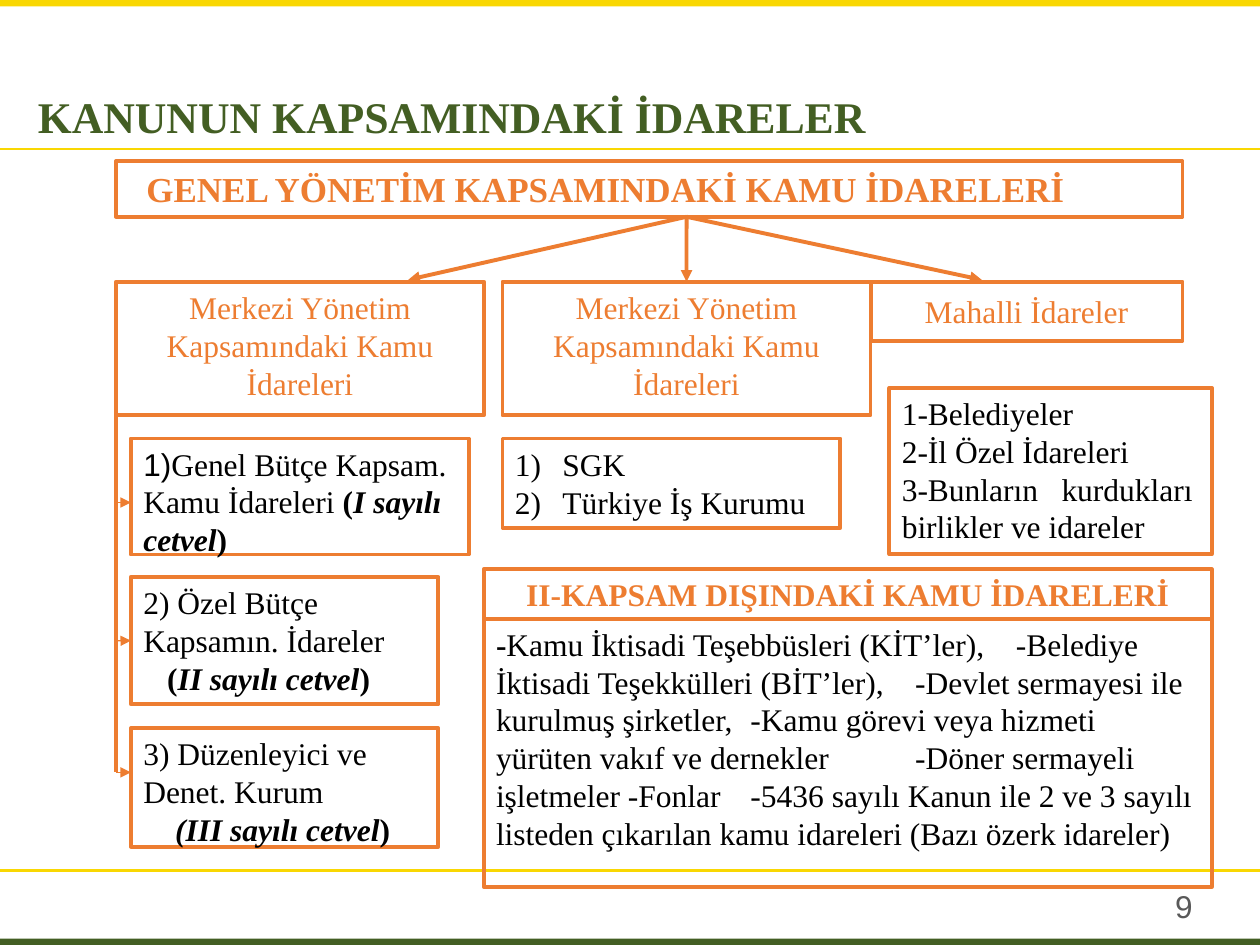
from dataclasses import dataclass

from lxml import etree
from pptx import Presentation
from pptx.dml.color import RGBColor
from pptx.enum.shapes import MSO_CONNECTOR, MSO_SHAPE
from pptx.enum.text import MSO_ANCHOR, PP_ALIGN
from pptx.oxml.ns import qn
from pptx.util import Cm, Pt

RECT = MSO_SHAPE.RECTANGLE
STRAIGHT = MSO_CONNECTOR.STRAIGHT
LEFT, CENTER = PP_ALIGN.LEFT, PP_ALIGN.CENTER
TOP, MIDDLE, BOTTOM = MSO_ANCHOR.TOP, MSO_ANCHOR.MIDDLE, MSO_ANCHOR.BOTTOM


@dataclass(frozen=True)
class Theme:
    yellow: str = "F9D702"
    green: str = "435E23"
    orange: str = "ED7D31"
    black: str = "000000"
    grey: str = "595959"
    serif: str = "Times New Roman"
    sans: str = "Arial"
    title: int = 25
    heading: int = 20
    body: int = 18
    thick: float = 2.25
    rule: float = 1.5
    thin: float = 0.75


T = Theme()


def rgb(value):
    return RGBColor.from_string(value)


def write(tf, paragraphs, color=T.black, size=T.body, bold=False, align=LEFT,
          anchor=TOP, font=T.serif, indents=(), tabs=(), numbered=False):
    """Each paragraph is a string or a list of (text, format) runs;
    the format letters are b bold, i italic, s sans serif."""
    tf.word_wrap = True
    tf.vertical_anchor = anchor
    for i, runs in enumerate(paragraphs):
        p = tf.paragraphs[0] if i == 0 else tf.add_paragraph()
        p.alignment = align
        pPr = p._p.get_or_add_pPr()
        if i < len(indents):
            pPr.set("marL", str(Cm(indents[i])))
        if numbered:
            pPr.set("marL", str(Cm(0.96)))
            pPr.set("indent", str(-Cm(0.96)))
            etree.SubElement(pPr, qn("a:buAutoNum"), type="arabicParenR")
        if tabs:
            tab_list = etree.SubElement(pPr, qn("a:tabLst"))
            for pos in tabs:
                etree.SubElement(tab_list, qn("a:tab"), pos=str(Cm(pos)), algn="l")
        for text, style in [(runs, "")] if isinstance(runs, str) else runs:
            r = p.add_run()
            r.text = text
            r.font.name = T.sans if "s" in style else font
            r.font.size = Pt(size)
            r.font.bold = bold or "b" in style
            r.font.italic = "i" in style
            r.font.color.rgb = rgb(color)


def block(s, x, y, w, h, paragraphs=(), fill=None, **fmt):
    """Outlined text box, or a plain band when a fill is given."""
    sp = s.shapes.add_shape(RECT, Cm(x), Cm(y), Cm(w), Cm(h))
    sp.shadow.inherit = False
    if fill:
        sp.fill.solid()
        sp.fill.fore_color.rgb = rgb(fill)
        sp.line.fill.background()
    else:
        sp.fill.background()
        sp.line.color.rgb = rgb(T.orange)
        sp.line.width = Pt(T.thick)
    if paragraphs:
        write(sp.text_frame, paragraphs, **fmt)
    return sp


def line(s, x1, y1, x2, y2, color=T.orange, width=T.thick, arrow=False):
    c = s.shapes.add_connector(STRAIGHT, Cm(x1), Cm(y1), Cm(x2), Cm(y2))
    c.line.color.rgb = rgb(color)
    c.line.width = Pt(width)
    if arrow:
        etree.SubElement(c.line._get_or_add_ln(), qn("a:tailEnd"), type="triangle")
    etree.SubElement(c._element.spPr, qn("a:effectLst"))
    return c


# Bands, rules and page number
def page_frame(s, x, y, w, h):
    band = 0.13
    block(s, x, y, w, band, fill=T.yellow)
    block(s, x, y + h - band, w, band, fill=T.green)
    for rule_y in (3.0, 17.55):
        line(s, x, y + rule_y, x + w, y + rule_y, T.yellow, T.rule)
    tb = s.shapes.add_textbox(Cm(x + w - 1.96), Cm(y + 17.75), Cm(1.96), Cm(1.02))
    write(tb.text_frame, ["9"], color=T.grey, font=T.sans)


def slide_title(s, x, y, w, h):
    sp = s.shapes.title
    sp.left, sp.top, sp.width, sp.height = Cm(x), Cm(y), Cm(w), Cm(h)
    write(sp.text_frame, ["KANUNUN KAPSAMINDAKİ İDARELER"], color=T.green,
          size=T.title, bold=True, anchor=BOTTOM)


# Heading bar, its three branches and the arrows between them
def overview(s, x, y, w, h):
    bar_h, row_y, branch_w, branch_h = 1.12, 2.43, 7.42, 2.69
    block(s, x, y, w, bar_h, ["GENEL YÖNETİM KAPSAMINDAKİ KAMU İDARELERİ"],
          color=T.orange, size=T.heading, bold=True, indents=(0.36,))
    fmt = {"color": T.orange, "align": CENTER}
    name = ["Merkezi Yönetim Kapsamındaki Kamu İdareleri"]
    block(s, x, y + row_y, branch_w, branch_h, name, **fmt)
    middle = block(s, x + 7.79, y + row_y, branch_w, branch_h, name, **fmt)
    local_x = 7.79 + branch_w
    block(s, x + local_x, y + row_y, w - local_x, 1.19, ["Mahalli İdareler"],
          anchor=MIDDLE, **fmt)
    hub = x + 11.5
    for end_x in (x + 5.89, x + 17.45):
        line(s, hub, y + bar_h, end_x, y + row_y - 0.04, arrow=True)
    line(s, hub, y + bar_h, hub, y + row_y, arrow=True).end_connect(middle, 0)


# Budget lists hanging from a vertical trunk
def central_budgets(s, x, y, w, h):
    gap = 0.3
    general = [[("1)", "s"), ("Genel Bütçe Kapsam. Kamu İdareleri ", ""),
                ("(", "b"), ("I sayılı cetvel", "bi"), (")", "b")]]
    special = ["2) Özel Bütçe Kapsamın. İdareler",
               [("(", "b"), ("II sayılı cetvel", "bi"), (")", "b")]]
    regulatory = ["3) Düzenleyici ve Denet. Kurum",
                  [("(III sayılı cetvel", "bi"), (")", "b")]]
    narrow = w - gap - 0.61
    block(s, x + gap, y + 0.48, w - gap, 2.34, general)
    second = block(s, x + gap, y + 3.27, narrow, 2.57, special, indents=(0, 0.48))
    block(s, x + gap, y + 6.32, narrow, h - 6.32, regulatory, indents=(0, 0.64))
    line(s, x, y, x, y + 7.21)
    arrows = [line(s, x, y + dy, x + gap, y + dy, width=T.thin, arrow=True)
              for dy in (1.77, 4.56, 7.21)]
    arrows[1].end_connect(second, 1)


def social_security(s, x, y, w, h):
    block(s, x, y, w, h, ["SGK", "Türkiye İş Kurumu"], anchor=MIDDLE, numbered=True)


def local_bodies(s, x, y, w, h):
    block(s, x, y, w, h, ["1-Belediyeler", "2-İl Özel İdareleri",
                          "3-Bunların\tkurdukları birlikler ve idareler"], tabs=(3.22,))


# Bodies outside the law: heading above its text
def out_of_scope(s, x, y, w, h):
    head_h = 0.99
    block(s, x, y, w, head_h, ["II-KAPSAM DIŞINDAKİ KAMU İDARELERİ"],
          color=T.orange, bold=True, align=CENTER, anchor=MIDDLE)
    text = ("Kamu İktisadi Teşebbüsleri (KİT’ler),\t-Belediye İktisadi Teşekkülleri "
            "(BİT’ler),\t-Devlet sermayesi ile kurulmuş şirketler,\t-Kamu görevi veya "
            "hizmeti yürüten vakıf ve dernekler\t-Döner sermayeli işletmeler "
            "-Fonlar\t-5436 sayılı Kanun ile 2 ve 3 sayılı listeden çıkarılan kamu "
            "idareleri (Bazı özerk idareler)")
    block(s, x, y + head_h, w, h - head_h, [[("-", "b"), (text, "")]],
          tabs=(2.34, 5.13, 8.45, 10.48))


def main():
    prs = Presentation()
    prs.slide_width, prs.slide_height = Cm(25.4), Cm(19.05)
    s = prs.slides.add_slide(prs.slide_layouts[5])
    page_frame(s, 0, 0, 25.4, 19.05)
    slide_title(s, 0.51, 1.68, 21.31, 1.32)
    overview(s, 2.34, 3.25, 21.5, 5.12)
    central_budgets(s, 2.34, 8.36, 7.11, 8.71)
    social_security(s, 10.13, 8.84, 6.81, 1.8)
    local_bodies(s, 17.93, 7.82, 6.5, 3.35)
    out_of_scope(s, 9.75, 11.48, 14.68, 6.4)
    prs.save("out.pptx")


if __name__ == "__main__":
    main()
